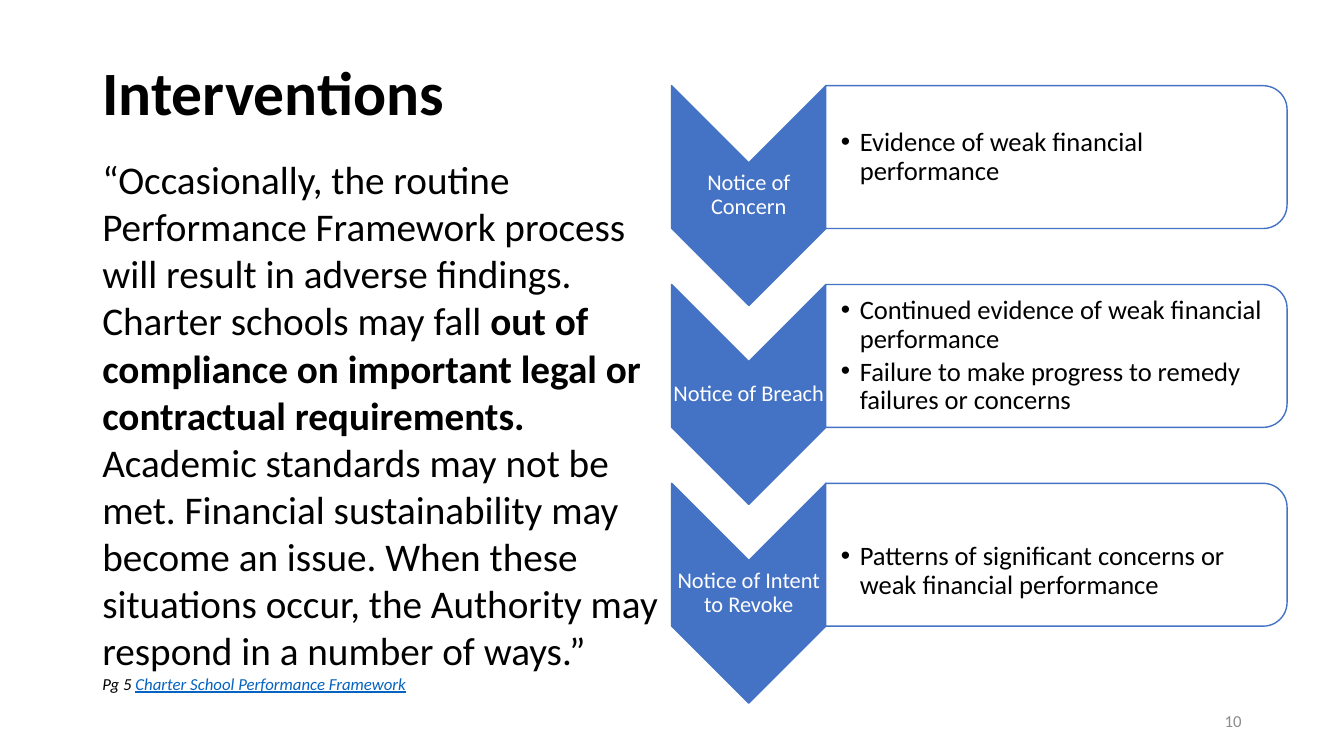
from pptx import Presentation
from pptx.dml.color import RGBColor
from pptx.enum.shapes import MSO_SHAPE as Preset
from pptx.enum.text import MSO_ANCHOR as Anchor, PP_ALIGN as Align
from pptx.oxml.ns import qn
from pptx.util import Cm, Pt
from lxml.etree import SubElement

# Content
TITLE = "Interventions"
QUOTE = [
    ("“Occasionally, the routine Performance Framework process will result in "
     "adverse findings. Charter schools may fall ", {}),
    ("out of compliance on important legal or contractual requirements. ", {"bold": True}),
    ("Academic standards may not be met. Financial sustainability may become an issue. "
     "When these situations occur, the Authority may respond in a number of ways.”", {}),
]
CITATION = [
    ("Pg 5 ", {"italic": True}),
    ("Charter School Performance Framework",
     {"italic": True, "underline": True, "color": "link"}),
]
# Label, bullets, downward shift of the bullets in cm
NOTICES = [
    ("Notice of Concern", ["Evidence of weak financial performance"], 0),
    ("Notice of Breach", ["Continued evidence of weak financial performance",
                          "Failure to make progress to remedy failures or concerns"], 0),
    ("Notice of Intent to Revoke",
     ["Patterns of significant concerns or weak financial performance"], 0.42),
]
PAGE_NUMBER = "10"

FONT = "Calibri"
COLORS = {"text": "000000", "blue": "4472C4", "white": "FFFFFF",
          "link": "0563C1", "gray": "8C8C8C"}

# Layout in cm
CHEVRON_X, CHEVRON_Y = 18.87, 4.93
CHEVRON_LENGTH, CHEVRON_WIDTH = 5.54, 3.89
PANEL_X, PANEL_Y = 26.62, 3.96
PANEL_LENGTH, PANEL_HEIGHT = 11.63, 3.6
BULLETS_X, BULLETS_WIDTH, BULLETS_HEIGHT = 26.54, 11.46, 3.25
LABEL_HEIGHT = 1.65
ROW_PITCH = 5.01
BULLET_INDENT = 0.48


def color(name):
    return RGBColor.from_string(COLORS[name])


def add_runs(paragraph, runs, size, default_color="text"):
    for text, style in runs:
        run = paragraph.add_run()
        run.text = text
        font = run.font
        font.name, font.size = FONT, Pt(size)
        font.bold = style.get("bold", False)
        font.italic = style.get("italic", False)
        font.underline = style.get("underline", False)
        font.color.rgb = color(style.get("color", default_color))


def add_text(slide, left, top, width, height, paragraphs, anchor=Anchor.MIDDLE,
             insets=(0.25, 0.13, 0.25, 0.13), align=Align.LEFT, spacing=1.0):
    """Each paragraph is (runs, size, color name)."""
    shape = slide.shapes.add_textbox(Cm(left), Cm(top), Cm(width), Cm(height))
    frame = shape.text_frame
    frame.word_wrap = True
    frame.vertical_anchor = anchor
    (frame.margin_left, frame.margin_top,
     frame.margin_right, frame.margin_bottom) = map(Cm, insets)
    for index, (runs, size, color_name) in enumerate(paragraphs):
        paragraph = frame.add_paragraph() if index else frame.paragraphs[0]
        paragraph.alignment = align
        paragraph.line_spacing = spacing
        add_runs(paragraph, runs, size, color_name)
    return frame


def add_turned_shape(slide, preset, center_x, center_y, length, breadth, fill):
    """Preset shape turned a quarter clockwise about its centre."""
    shape = slide.shapes.add_shape(
        preset, Cm(center_x - length / 2), Cm(center_y - breadth / 2),
        Cm(length), Cm(breadth))
    shape.rotation = 90
    shape.shadow.inherit = False
    shape.fill.solid()
    shape.fill.fore_color.rgb = color(fill)
    shape.line.color.rgb = color("blue")
    shape.line.width = Pt(1)
    return shape


def add_bullet(paragraph):
    properties = paragraph._p.get_or_add_pPr()
    properties.set("marL", str(Cm(BULLET_INDENT)))
    properties.set("indent", str(-Cm(BULLET_INDENT)))
    SubElement(properties, qn("a:buFont"), typeface="Arial")
    SubElement(properties, qn("a:buChar"), char="•")


def add_notice(slide, row, label, bullets, shift):
    offset = row * ROW_PITCH
    chevron_y, panel_y = CHEVRON_Y + offset, PANEL_Y + offset

    # Chevron and its label
    add_turned_shape(slide, Preset.CHEVRON, CHEVRON_X, chevron_y,
                     CHEVRON_LENGTH, CHEVRON_WIDTH, "blue")
    add_text(slide, CHEVRON_X - CHEVRON_WIDTH / 2, chevron_y - LABEL_HEIGHT / 2,
             CHEVRON_WIDTH, LABEL_HEIGHT, [([(label, {})], 16, "white")],
             insets=(0.03,) * 4, align=Align.CENTER, spacing=0.9)

    # Panel and its bullets
    add_turned_shape(slide, Preset.ROUND_2_SAME_RECTANGLE, PANEL_X, panel_y,
                     PANEL_HEIGHT, PANEL_LENGTH, "white")
    frame = add_text(slide, BULLETS_X - BULLETS_WIDTH / 2,
                     panel_y - BULLETS_HEIGHT / 2 + shift,
                     BULLETS_WIDTH, BULLETS_HEIGHT,
                     [([(bullet, {})], 19, "text") for bullet in bullets],
                     insets=(0.38, 0.03, 0.03, 0.03), spacing=0.9)
    for paragraph in frame.paragraphs:
        paragraph.space_after = Pt(3)
        add_bullet(paragraph)


def main():
    presentation = Presentation()
    presentation.slide_width, presentation.slide_height = Cm(33.87), Cm(19.05)
    slide = presentation.slides.add_slide(presentation.slide_layouts[6])

    # Title, quotation and page number
    add_text(slide, 2.33, 1.01, 29.21, 2.78,
             [([(TITLE, {"bold": True})], 44, "text")], spacing=0.9)
    add_text(slide, 2.33, 3.79, 14.6, 13.94,
             [(QUOTE, 28, "text"), (CITATION, 12, "text")], anchor=Anchor.TOP)
    add_text(slide, 23.92, 17.66, 7.62, 1.01,
             [([(PAGE_NUMBER, {})], 12, "gray")], align=Align.RIGHT)

    # Notices
    for row, notice in enumerate(NOTICES):
        add_notice(slide, row, *notice)

    presentation.save("out.pptx")


if __name__ == "__main__":
    main()
